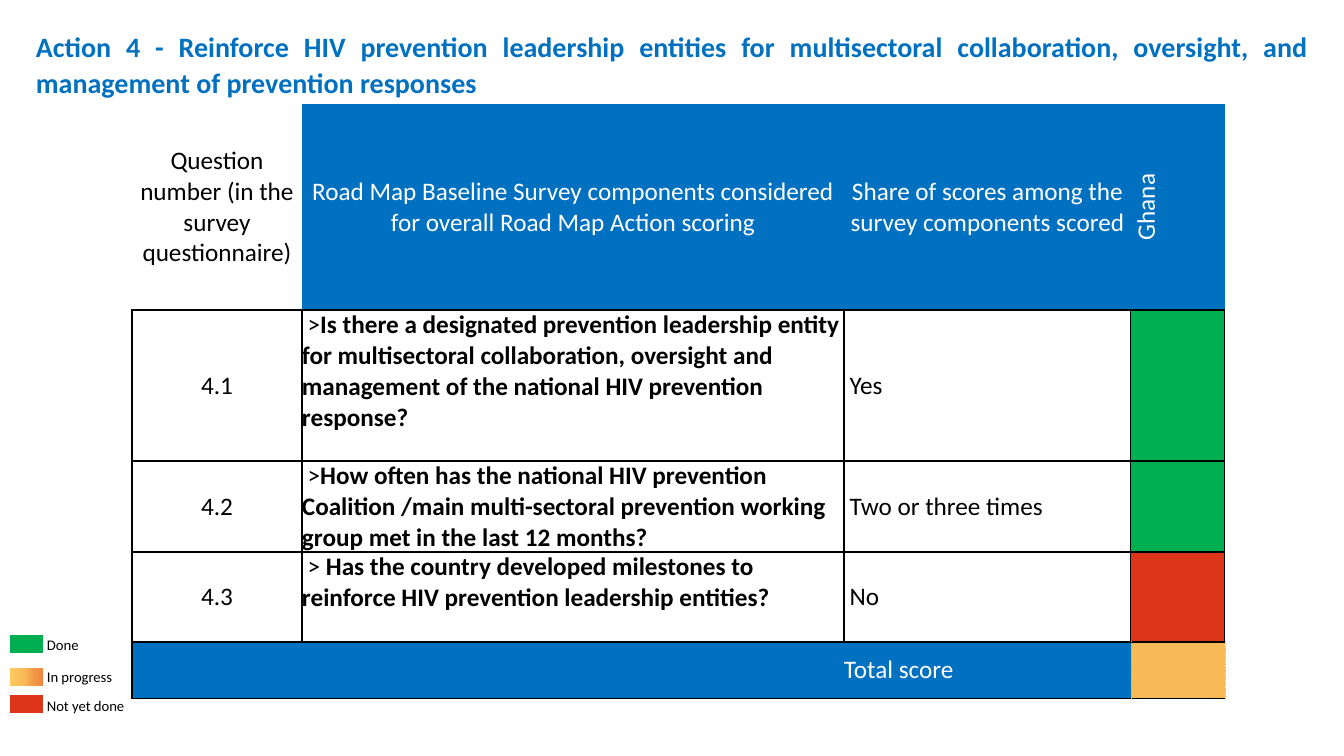
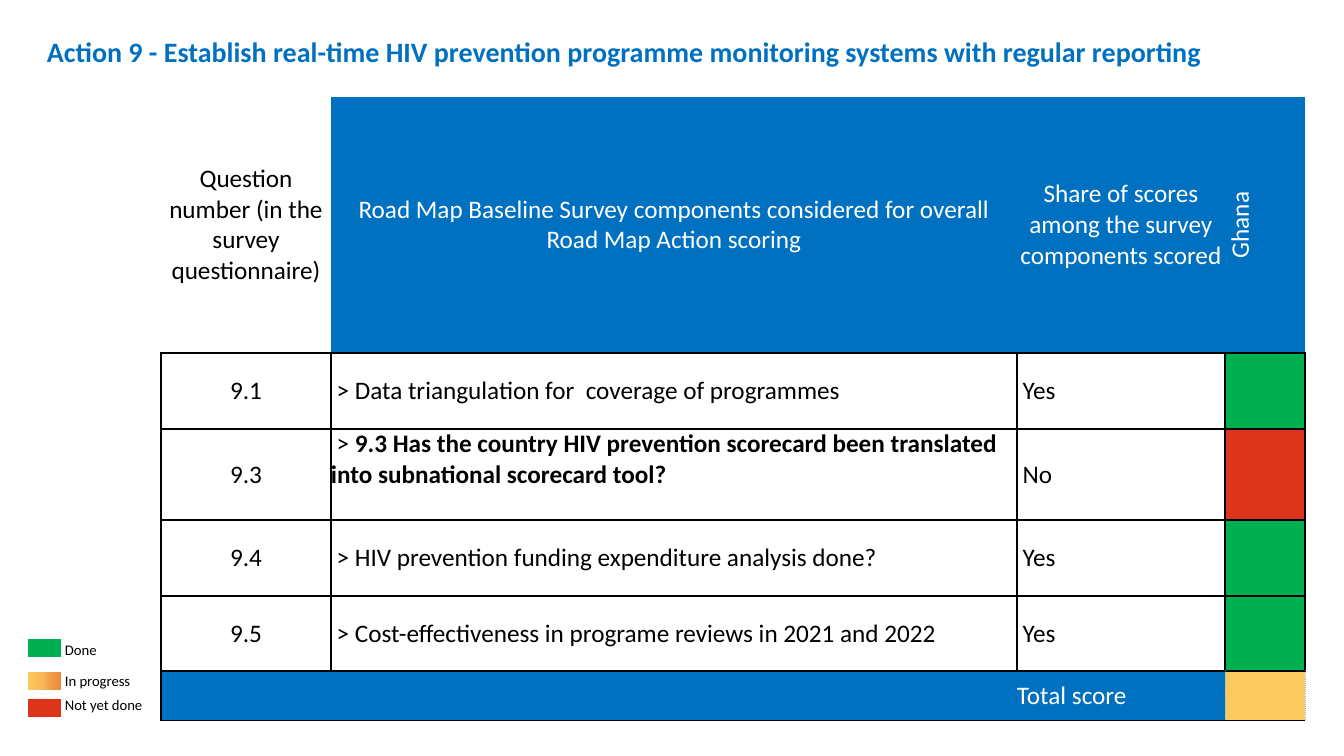
from lxml import etree
from pptx import Presentation
from pptx.dml.color import RGBColor
from pptx.enum.text import MSO_ANCHOR, PP_ALIGN
from pptx.oxml.ns import qn
from pptx.util import Emu, Pt

TOP, MIDDLE = MSO_ANCHOR.TOP, MSO_ANCHOR.MIDDLE
LEFT, CENTER, JUSTIFY = PP_ALIGN.LEFT, PP_ALIGN.CENTER, PP_ALIGN.JUSTIFY

FONT = "Calibri"
BLUE, BLACK, WHITE = "0070C0", "000000", "FFFFFF"
GREEN, RED, PALE_BLUE = "00B050", "DD3519", "8DB4E2"
AMBER, LIGHT_AMBER = "F8B957", "FBCA5F"
AMBER_STOPS = [(0, LIGHT_AMBER), (44, AMBER), (73, "F19847"), (100, "EE873F")]
NO_GRID_STYLE = "{2D5ABB26-0587-4C30-8999-92F81FD0307C}"

SOLID = (BLACK, 1, "solid")
THIN = (BLACK, 0.5, "solid")
DOTTED = (PALE_BLUE, 0.5, "sysDot")
BODY_BORDERS = {side: SOLID for side in "LRTB"}
TOTAL_BORDERS = [
    {"L": SOLID, "T": SOLID, "B": THIN},
    {"T": SOLID, "B": THIN},
    {"R": DOTTED, "T": SOLID, "B": THIN},
    {"L": DOTTED, "R": DOTTED, "T": SOLID, "B": THIN},
]

HEADERS = [
    "Question number (in the survey questionnaire)",
    "Road Map Baseline Survey components considered for overall Road Map Action scoring",
    "Share of scores among the survey components scored",
    "Ghana",
]
LEGEND = [
    ("Done", GREEN, 0, 68),
    ("In progress", AMBER_STOPS, 33, 95),
    ("Not yet done", RED, 60, 107),
]

ACTIONS = [
    {
        "title": "Action 4 - Reinforce HIV prevention leadership entities for multisectoral "
                 "collaboration, oversight, and management of prevention responses",
        "title_box": (26, 22, 1292, 82),
        "table_at": (132, 104),
        "cols": [170, 542, 287, 94],
        "rows": [206, 151, 91, 90, 56],
        "scores": [
            ("4.1", " >", "Is there a designated prevention leadership entity for multisectoral "
             "collaboration, oversight and management of the national HIV prevention response?",
             True, " Yes", GREEN),
            ("4.2", " >", "How often has the national HIV prevention Coalition /main multi-sectoral "
             "prevention working group met in the last 12 months?",
             True, " Two or three times", GREEN),
            ("4.3", " > ", "Has the country developed milestones to reinforce HIV prevention "
             "leadership entities?", True, " No", RED),
        ],
        "total": AMBER,
        "legend_at": (10, 635),
        "label_offsets": [-4, 28, 57],
    },
    {
        "title": "Action 9 - Establish real-time HIV prevention programme monitoring systems "
                 "with regular reporting",
        "title_box": (37, 27, 1292, 45),
        "table_at": (161, 97),
        "cols": [170, 686, 208, 80],
        "rows": [256, 76, 91, 76, 75, 49],
        "scores": [
            ("9.1", " > ", "Data triangulation for  coverage of programmes", False, " Yes", GREEN),
            ("9.3", " > ", "9.3 Has the country HIV prevention scorecard been translated into "
             "subnational scorecard tool?", True, " No", RED),
            ("9.4", " > ", "HIV prevention funding expenditure analysis done?", False, " Yes", GREEN),
            ("9.5", " > ", "Cost-effectiveness in programe reviews in 2021 and 2022",
             False, " Yes", GREEN),
        ],
        "total": LIGHT_AMBER,
        "legend_at": (28, 639),
        "label_offsets": [-3, 28, 52],
    },
]


def px(n):
    return Emu(round(n * 914400 / 100.8))


def rgb(color):
    return RGBColor.from_string(color)


def style(p, size, color, align=LEFT, bold=None):
    p.alignment = align
    p.font.name, p.font.size, p.font.bold = FONT, Pt(size), bold
    p.font.color.rgb = rgb(color)


def add_text(s, box, text, size, color, align=LEFT, bold=None):
    tf = s.shapes.add_textbox(*map(px, box)).text_frame
    tf.word_wrap = True
    p = tf.paragraphs[0]
    p.text = text
    style(p, size, color, align, bold)
    return p


def add_table(s, at, cols, rows):
    box = map(px, (*at, sum(cols), sum(rows)))
    table = s.shapes.add_table(len(rows), len(cols), *box).table
    table.first_row = table.horz_banding = False
    table._tbl.tblPr.find(qn("a:tableStyleId")).text = NO_GRID_STYLE
    for column, width in zip(table.columns, cols):
        column.width = px(width)
    for row, height in zip(table.rows, rows):
        row.height = px(height)
    return table


def set_borders(cell, borders):
    tcPr = cell._tc.get_or_add_tcPr()
    for side in "LRTB":
        if side in borders:
            color, width, dash = borders[side]
            ln = etree.SubElement(tcPr, qn(f"a:ln{side}"), w=str(Pt(width)))
            fill = etree.SubElement(ln, qn("a:solidFill"))
            etree.SubElement(fill, qn("a:srgbClr"), val=color)
            etree.SubElement(ln, qn("a:prstDash"), val=dash)


def set_gradient(cell, stops):
    cell.fill.gradient()
    cell.fill.gradient_angle = 0
    gsLst = cell._tc.tcPr.find(qn("a:gradFill")).find(qn("a:gsLst"))
    for gs in list(gsLst):
        gsLst.remove(gs)
    for percent, color in stops:
        gs = etree.SubElement(gsLst, qn("a:gs"), pos=str(percent * 1000))
        etree.SubElement(gs, qn("a:srgbClr"), val=color)


def fill_cell(cell, runs=(), fill=None, borders=BODY_BORDERS, color=BLACK, align=LEFT,
              anchor=MIDDLE, size=18):
    set_borders(cell, borders)
    if isinstance(fill, list):
        set_gradient(cell, fill)
    elif fill:
        cell.fill.solid()
        cell.fill.fore_color.rgb = rgb(fill)
    else:
        cell.fill.background()
    cell.margin_left = cell.margin_right = cell.margin_top = cell.margin_bottom = 0
    cell.vertical_anchor = anchor
    p = cell.text_frame.paragraphs[0]
    style(p, size, color, align)
    for text, bold in runs:
        r = p.add_run()
        r.text, r.font.bold = text, bold
    if not runs:
        etree.SubElement(p._p, qn("a:endParaRPr"), sz=str(size * 100))


def add_title(s, box, text):
    p = add_text(s, box, text, 20, BLUE, JUSTIFY, True)
    p.line_spacing, p.space_after = 1.07, Pt(8)


def add_score_table(s, at, cols, rows, scores, total):
    table = add_table(s, at, cols, rows)

    for i, text in enumerate(HEADERS):
        fill, color = (BLUE, WHITE) if i else (None, BLACK)
        fill_cell(table.cell(0, i), [(text, False)], fill, {"B": SOLID}, color, CENTER)
    table.cell(0, len(cols) - 1)._tc.get_or_add_tcPr().set("vert", "vert270")

    for i, (number, lead, question, bold, answer, status) in enumerate(scores, 1):
        runs = [(lead, False), (question, True)] if bold else [(lead + question, False)]
        fill_cell(table.cell(i, 0), [(number, False)], align=CENTER)
        fill_cell(table.cell(i, 1), runs, anchor=TOP if bold else MIDDLE)
        fill_cell(table.cell(i, 2), [(answer, False)])
        fill_cell(table.cell(i, 3), fill=status)

    last = len(rows) - 1
    for i, borders in enumerate(TOTAL_BORDERS):
        runs = [("Total score", False)] if i == 2 else []
        fill_cell(table.cell(last, i), runs, total if i == 3 else BLUE, borders, WHITE)


def add_legend(s, at, label_offsets):
    x, y = at
    for (label, fill, dy, width), label_dy in zip(LEGEND, label_offsets):
        swatch = add_table(s, (x, y + dy), [33], [18])
        fill_cell(swatch.cell(0, 0), fill=fill, borders={}, size=8)
        add_text(s, (x + 27, y + label_dy, width, 28), label, 10.5, BLACK)


def add_action_slide(prs, action):
    s = prs.slides.add_slide(prs.slide_layouts[6])
    add_title(s, action["title_box"], action["title"])
    add_score_table(s, action["table_at"], action["cols"], action["rows"],
                    action["scores"], action["total"])
    add_legend(s, action["legend_at"], action["label_offsets"])


def main():
    prs = Presentation()
    prs.slide_width, prs.slide_height = px(1344), px(756)
    for action in ACTIONS:
        add_action_slide(prs, action)
    prs.save("out.pptx")


if __name__ == "__main__":
    main()
